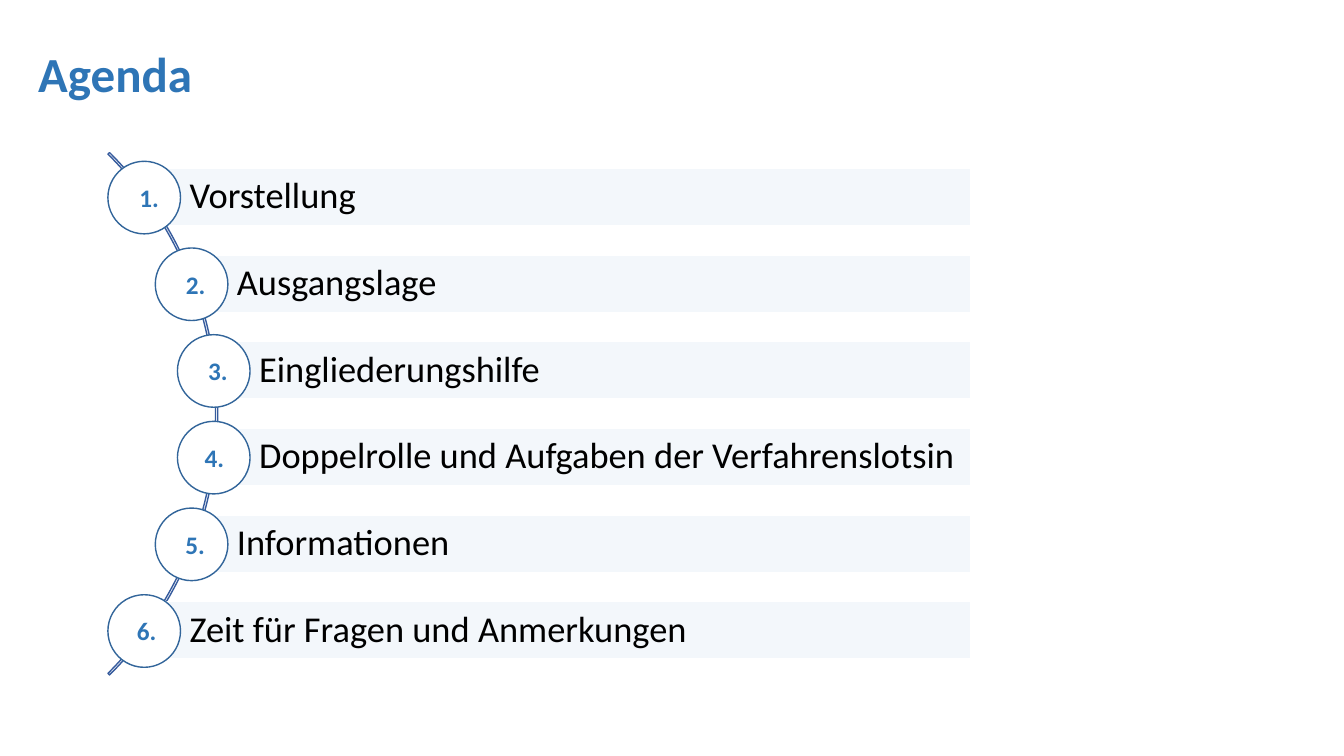
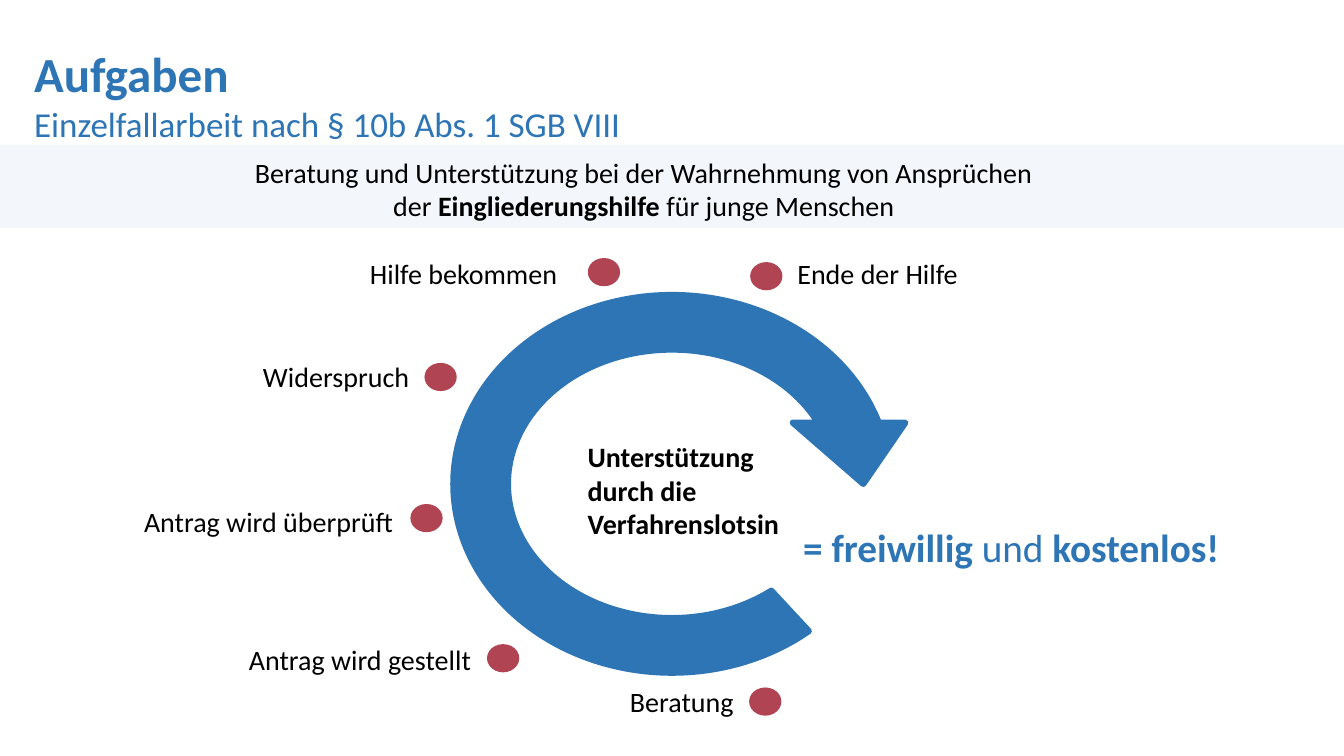
from pptx import Presentation
from pptx import util as u
from pptx.dml import color
from pptx.enum import shapes, text

BLUE, PALE, RED = "2E75B6", "F3F7FB", "B04453"
WHITE, BLACK = "FFFFFF", "000000"
RING, ARC = "32659A", "365B9D"
SHAPE, ALIGN = shapes.MSO_SHAPE, text.PP_ALIGN


def rgb(value):
    return color.RGBColor.from_string(value)


class Deck:
    font = "Calibri"

    def __init__(self):
        self.prs = Presentation()
        self.prs.slide_width = u.Inches(13.33)
        self.prs.slide_height = u.Inches(7.5)
        self.s = None

    def slide(self):
        self.s = self.prs.slides.add_slide(self.prs.slide_layouts[6])

    def shape(self, kind, x, y, w, h, fill=None, line=None, width=1, adj=()):
        sp = self.s.shapes.add_shape(kind, *map(u.Inches, (x, y, w, h)))
        sp.shadow.inherit = False
        for i, value in enumerate(adj):
            sp.adjustments[i] = value
        if fill:
            sp.fill.solid()
            sp.fill.fore_color.rgb = rgb(fill)
        else:
            sp.fill.background()
        if line:
            sp.line.color.rgb = rgb(line)
            sp.line.width = u.Pt(width)
        else:
            sp.line.fill.background()
        return sp

    def add_runs(self, p, marked, size, ink=BLACK, align=ALIGN.LEFT):
        """Text between asterisks is bold."""
        p.alignment = align
        for i, part in enumerate(marked.split("*")):
            if part:
                r = p.add_run()
                r.text = part
                r.font.name = self.font
                r.font.size = u.Pt(size)
                r.font.bold = i % 2 == 1
                r.font.color.rgb = rgb(ink)

    def label(self, marked, x, y, w, h, size=20, ink=BLACK, align=ALIGN.LEFT):
        tf = self.s.shapes.add_textbox(*map(u.Inches, (x, y, w, h))).text_frame
        tf.word_wrap = True
        tf.auto_size = text.MSO_AUTO_SIZE.SHAPE_TO_FIT_TEXT
        self.add_runs(tf.paragraphs[0], marked, size, ink, align)
        return tf

    def title(self, heading, x, w, h, subtitle=None):
        tf = self.label(f"*{heading}*", x, 0.38, w, h, 35, BLUE)
        if subtitle:
            self.add_runs(tf.add_paragraph(), subtitle, 25, BLUE)

    def bar(self, caption, x, y, right):
        sp = self.shape(SHAPE.RECTANGLE, x, y, right - x, 0.57, PALE, WHITE)
        tf = sp.text_frame
        tf.word_wrap = True
        tf.vertical_anchor = text.MSO_ANCHOR.MIDDLE
        tf.margin_left = u.Inches(0.45)
        tf.margin_right = tf.margin_top = tf.margin_bottom = u.Inches(0.07)
        p = tf.paragraphs[0]
        p.line_spacing = 0.9
        self.add_runs(p, caption, 26)

    def dot(self, x, y):
        self.shape(SHAPE.OVAL, x, y, 0.32, 0.28, RED)


def agenda(deck):
    deck.slide()
    deck.shape(SHAPE.BLOCK_ARC, -5.17, 0.44, 7.33, 7.33,
               line=ARC, adj=(189, 27, 0.003))
    items = [
        ("Vorstellung", 1.07, 1.19, ALIGN.CENTER),
        ("Ausgangslage", 1.54, 1.65, ALIGN.CENTER),
        ("Eingliederungshilfe", 1.76, 1.87, ALIGN.CENTER),
        ("Doppelrolle und Aufgaben der Verfahrenslotsin", 1.76, 1.93, ALIGN.LEFT),
        ("Informationen", 1.54, 1.74, ALIGN.LEFT),
        ("Zeit für Fragen und Anmerkungen", 1.07, 1.26, ALIGN.LEFT),
    ]
    for i, (caption, x, number_x, align) in enumerate(items):
        y = 1.67 + 0.86 * i
        deck.bar(caption, x + 0.36, y, 9.63)
        deck.shape(SHAPE.OVAL, x, y - 0.07, 0.72, 0.72, WHITE, RING)
        deck.label(f"*{i + 1}.*", number_x, y + 0.09, 0.58, 0.4, 18, BLUE, align)
    deck.title("Agenda", 0.28, 4.81, 0.69)


def tasks(deck):
    deck.slide()
    deck.shape(SHAPE.RECTANGLE, 0, 1.45, 13.33, 0.81, PALE, PALE)
    deck.label("Beratung und Unterstützung bei der Wahrnehmung von Ansprüchen "
               "der *Eingliederungshilfe* für junge Menschen",
               2.31, 1.49, 8.15, 0.77, align=ALIGN.CENTER)
    deck.shape(SHAPE.CIRCULAR_ARROW, 4.21, 2.64, 4.91, 4.32, BLUE, BLUE, 4.5,
               (0.125, 11.423, 204.577, 28.267, 0.129))
    steps = [
        ("Beratung", 6.15, 6.74, 1.77, 7.43, 6.82),
        ("Antrag wird gestellt", 2.37, 6.33, 2.43, 4.83, 6.39),
        ("Antrag wird überprüft", 1.33, 4.96, 2.71, 4.07, 5),
        ("Widerspruch", 2.51, 3.52, 1.98, 4.21, 3.6),
        ("Hilfe bekommen", 3.57, 2.5, 2.35, 5.83, 2.56),
        ("Ende der Hilfe", 7.81, 2.5, 2.35, 7.44, 2.6),
    ]
    for caption, x, y, w, dot_x, dot_y in steps:
        deck.label(caption, x, y, w, 0.44)
        deck.dot(dot_x, dot_y)
    deck.label("*Unterstützung durch die Verfahrenslotsin*", 5.73, 4.31, 2.35, 1.11)
    deck.label("*= freiwillig *und* kostenlos!*", 7.75, 5.14, 4.44, 0.57,
               28, BLUE, ALIGN.RIGHT)
    deck.title("Aufgaben", 0.24, 8.15, 1.11,
               "Einzelfallarbeit nach § 10b Abs. 1 SGB VIII")


def main():
    deck = Deck()
    agenda(deck)
    tasks(deck)
    deck.prs.save("out.pptx")


if __name__ == "__main__":
    main()
